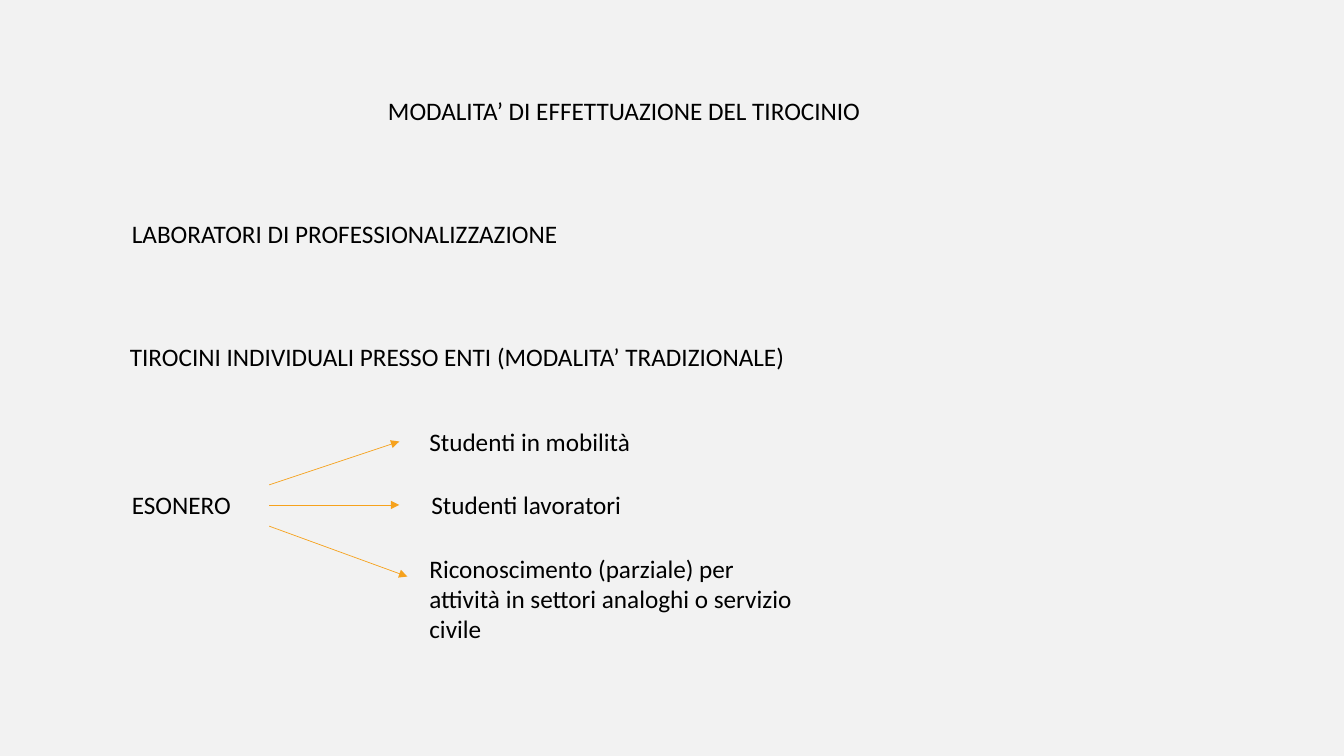
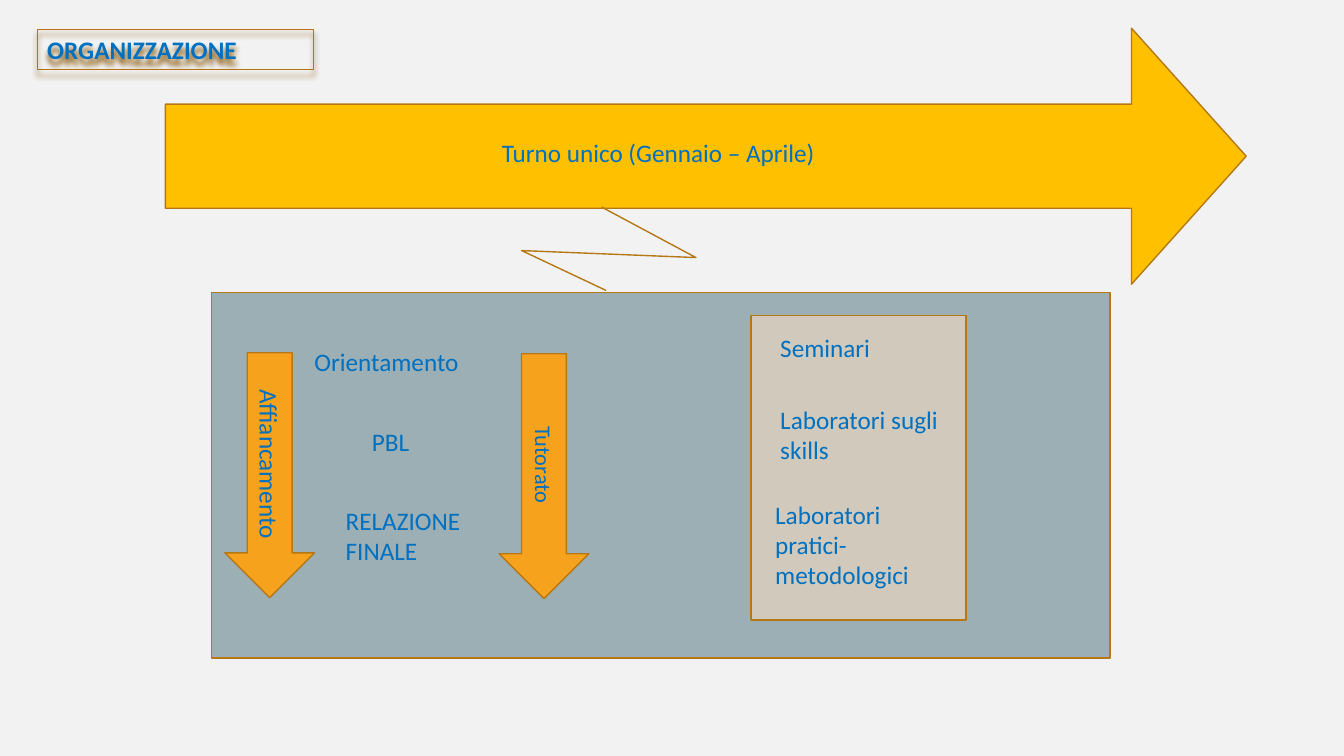
from lxml import etree
from pptx import Presentation
from pptx.dml.color import RGBColor
from pptx.enum.shapes import MSO_CONNECTOR, MSO_SHAPE
from pptx.enum.text import MSO_ANCHOR, PP_ALIGN
from pptx.oxml.ns import qn
from pptx.util import Inches, Pt

RECTANGLE = MSO_SHAPE.RECTANGLE
RIGHT_ARROW = MSO_SHAPE.RIGHT_ARROW
CALLOUT = MSO_SHAPE.LINE_CALLOUT_3
STRAIGHT = MSO_CONNECTOR.STRAIGHT
LEFT, CENTER = PP_ALIGN.LEFT, PP_ALIGN.CENTER
TOP, MIDDLE = MSO_ANCHOR.TOP, MSO_ANCHOR.MIDDLE

BACKGROUND = "F2F2F2"
BLACK, BLUE = "000000", "0070C0"
ORANGE, YELLOW, BROWN = "F6A21D", "FFC000", "B67815"
SLATE, SAND = "9BAFB5", "D1CABC"
TITLE_LINE, TITLE_SHADOW = "B67215", "845305"
FONT = {"name": "Calibri", "size": Pt(18)}
LINE_HEIGHT, BOX_PADDING = 0.3, 0.1

MODES = [
    ("MODALITA’ DI EFFETTUAZIONE DEL TIROCINIO", 3.75, 0.9, 5.6, 1),
    ("LABORATORI DI PROFESSIONALIZZAZIONE", 1.21, 2.12, 5.12, 1),
    ("TIROCINI INDIVIDUALI PRESSO ENTI (MODALITA’ TRADIZIONALE)", 1.19, 3.34, 7.64, 1),
    ("ESONERO", 1.21, 4.81, 1.32, 1),
    ("Studenti in mobilità", 4.16, 4.18, 3.85, 1),
    ("Studenti lavoratori", 4.18, 4.81, 3.85, 1),
    ("Riconoscimento (parziale) per attività in settori analoghi o servizio civile",
     4.16, 5.44, 3.85, 3),
]
EXEMPTION_ARROWS = [
    ((2.67, 5.22), (4.04, 5.72)),
    ((2.67, 4.81), (3.96, 4.38)),
    ((2.67, 5.01), (3.96, 5.01)),
]

PANELS = [
    (RIGHT_ARROW, (1.64, 0.28, 10.72, 2.54), YELLOW, (0.407, 0.448)),
    (CALLOUT, (2.1, 2.9, 8.91, 3.63), SLATE,
     (-0.233, 0.434, -0.095, 0.539, -0.114, 0.345, -0.005, 0.439)),
    (RECTANGLE, (7.45, 3.13, 2.13, 3.02), SAND, ()),
]
ACTIVITIES = [
    ("Orientamento", 3.02, 3.39, 2.17, 1),
    ("PBL", 3.59, 4.18, 0.7, 1),
    ("RELAZIONE FINALE", 3.33, 4.96, 1.62, 2),
    ("Seminari", 7.64, 3.25, 1.94, 1),
    ("Laboratori sugli skills", 7.64, 3.96, 1.94, 2),
    ("Laboratori pratici-metodologici", 7.59, 4.9, 1.94, 3),
]
SUPPORT_ARROWS = [
    ("Affiancamento", (1.46, 4.27, 2.43, 0.89), 18),
    ("Tutorato", (4.18, 4.28, 2.43, 0.89), 16),
]
PERIOD = ("Turno unico (Gennaio – Aprile)", (2.48, 1.31, 8.1, 0.4))
TITLE = ("ORGANIZZAZIONE", (0.37, 0.29, 2.74, 0.4))


def rgb(color):
    return RGBColor.from_string(color)


def add_slide(presentation):
    slide = presentation.slides.add_slide(presentation.slide_layouts[6])
    fill = slide.background.fill
    fill.solid()
    fill.fore_color.rgb = rgb(BACKGROUND)
    return slide


def write(shape, text, color, align=LEFT, anchor=TOP, **formats):
    frame = shape.text_frame
    frame.word_wrap = True
    frame.vertical_anchor = anchor
    paragraph = frame.paragraphs[0]
    paragraph.alignment = align
    run = paragraph.add_run()
    run.text = text
    for name, value in {**FONT, **formats}.items():
        setattr(run.font, name, value)
    run.font.color.rgb = rgb(color)


def add_texts(slide, items, color):
    for text, left, top, width, lines in items:
        height = lines * LINE_HEIGHT + BOX_PADDING
        box = slide.shapes.add_textbox(*map(Inches, (left, top, width, height)))
        write(box, text, color)


def add_shape(slide, kind, place, fill=None, line=BROWN, width=1, adjustments=()):
    shape = slide.shapes.add_shape(kind, *map(Inches, place))
    shape.shadow.inherit = False
    if fill:
        shape.fill.solid()
        shape.fill.fore_color.rgb = rgb(fill)
    else:
        shape.fill.background()
    if line:
        shape.line.color.rgb = rgb(line)
        shape.line.width = Pt(width)
    else:
        shape.line.fill.background()
    for index, value in enumerate(adjustments):
        shape.adjustments[index] = value
    return shape


def add_arrow(slide, start, end):
    connector = slide.shapes.add_connector(STRAIGHT, *map(Inches, start + end))
    connector.line.color.rgb = rgb(ORANGE)
    connector.line.width = Pt(0.5)
    properties = connector._element.spPr
    etree.SubElement(properties.find(qn("a:ln")), qn("a:tailEnd"), type="triangle")
    etree.SubElement(properties, qn("a:effectLst"))


def add_shadow(shape, color):
    effects = shape._element.spPr.find(qn("a:effectLst"))
    shadow = etree.SubElement(
        effects, qn("a:outerShdw"), blurRad=str(Pt(4)), dist=str(Pt(4)),
        dir=str(90 * 60000), algn="tl", rotWithShape="0")
    etree.SubElement(shadow, qn("a:srgbClr"), val=color)


def build_modes(presentation):
    slide = add_slide(presentation)
    add_texts(slide, MODES, BLACK)
    for start, end in EXEMPTION_ARROWS:
        add_arrow(slide, start, end)


def build_organization(presentation):
    slide = add_slide(presentation)
    for kind, place, fill, adjustments in PANELS:
        add_shape(slide, kind, place, fill, adjustments=adjustments)
    text, place = PERIOD
    write(add_shape(slide, RECTANGLE, place, YELLOW, line=None), text, BLUE, CENTER)
    for text, place, size in SUPPORT_ARROWS:
        arrow = add_shape(slide, RIGHT_ARROW, place, ORANGE)
        arrow.rotation = 90
        write(arrow, text, BLUE, CENTER, MIDDLE, size=Pt(size))
    add_texts(slide, ACTIVITIES, BLUE)
    text, place = TITLE
    title = add_shape(slide, RECTANGLE, place, line=TITLE_LINE, width=0.75)
    add_shadow(title, TITLE_SHADOW)
    write(title, text, BLUE, bold=True)


def main():
    presentation = Presentation()
    presentation.slide_width = Inches(13.33)
    presentation.slide_height = Inches(7.5)
    build_modes(presentation)
    build_organization(presentation)
    presentation.save("out.pptx")


if __name__ == "__main__":
    main()
